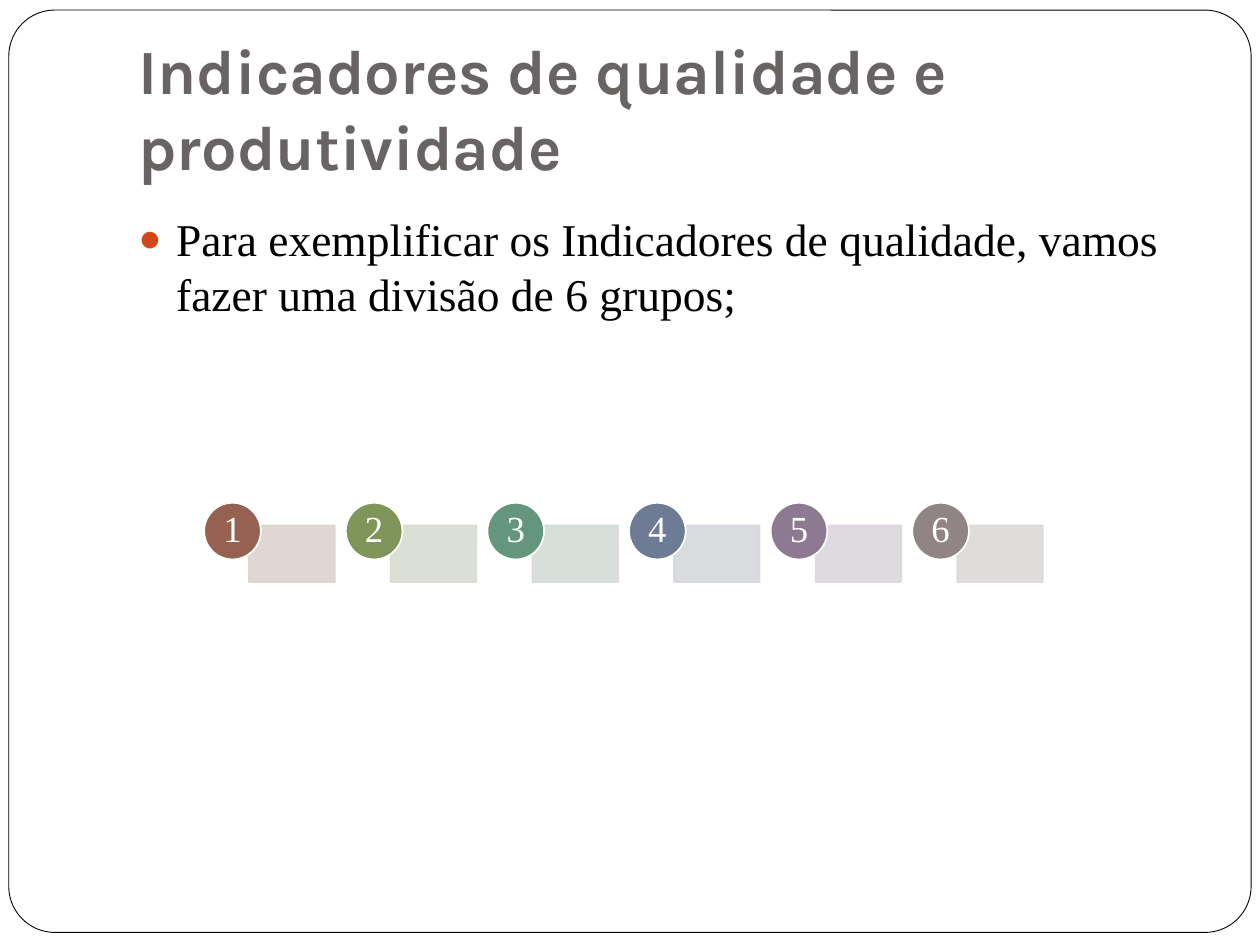
from lxml import etree
from pptx import Presentation
from pptx.dml.color import RGBColor
from pptx.enum import shapes, text
from pptx.oxml.ns import qn
from pptx.util import Pt

TITLE = "Indicadores de qualidade e produtividade"
BODY = ("Para exemplificar os Indicadores de qualidade, "
        "vamos fazer uma divisão de 6 grupos;")
# label, circle colour, panel colour
GROUPS = [
    ("1", "956251", "DDD3D0"),
    ("2", "7F955A", "D9DCD2"),
    ("3", "64957D", "D4DCD8"),
    ("4", "6E7B94", "D6D8DC"),
    ("5", "8D7992", "DBD7DC"),
    ("6", "918485", "DCD9D9"),
]
COLORS = {"white": "FFFFFF", "black": "000000", "title": "696464", "bullet": "D34817"}
SERIF = "Times New Roman"
GROUP_LEFT, GROUP_TOP, GROUP_STEP = 116.64, 287.28, 80.93
CIRCLE = 32.4
PANEL_DX, PANEL_DY, PANEL_W, PANEL_H = 25.7, 12.96, 48.96, 32.4


def rgb(value):
    return RGBColor.from_string(value)


def add_shape(kind, box, fill, line, width=1, opacity=None):
    sp = slide.shapes.add_shape(kind, *map(Pt, box))
    sp.shadow.inherit = False
    sp.fill.solid()
    sp.fill.fore_color.rgb = rgb(fill)
    sp.line.color.rgb = rgb(line)
    sp.line.width = Pt(width)
    if opacity is not None:
        for color in sp._element.spPr.iter(qn("a:srgbClr")):
            etree.SubElement(color, qn("a:alpha"), val=str(opacity * 1000))
    return sp


def write(sp, content, size, color, font=SERIF, bold=False, bullet=None,
          align=text.PP_ALIGN.LEFT, anchor=text.MSO_ANCHOR.TOP,
          insets=(7.2, 3.6, 7.2, 3.6), spacing=None):
    tf = sp.text_frame
    tf.word_wrap = True
    tf.vertical_anchor = anchor
    tf.margin_left, tf.margin_top, tf.margin_right, tf.margin_bottom = map(Pt, insets)
    p = tf.paragraphs[0]
    p.alignment = align
    p.line_spacing = spacing
    if bullet:
        add_bullet(p, bullet)
    r = p.add_run()
    r.text = content
    r.font.name = font
    r.font.size = Pt(size)
    r.font.bold = bold
    r.font.color.rgb = rgb(color)


def add_bullet(p, color, indent=21.6):
    pPr = p._p.get_or_add_pPr()
    pPr.set("marL", str(Pt(indent)))
    pPr.set("indent", str(-Pt(indent)))
    clr = etree.SubElement(pPr, qn("a:buClr"))
    etree.SubElement(clr, qn("a:srgbClr"), val=color)
    etree.SubElement(pPr, qn("a:buSzPct"), val="85000")
    etree.SubElement(pPr, qn("a:buFont"), typeface=SERIF)
    etree.SubElement(pPr, qn("a:buChar"), char="●")


prs = Presentation()
prs.slide_width, prs.slide_height = Pt(720), Pt(540)
slide = prs.slides.add_slide(prs.slide_layouts[6])

frame = add_shape(shapes.MSO_SHAPE.ROUNDED_RECTANGLE, (5.04, 5.76, 709.92, 527.04),
                  COLORS["white"], COLORS["black"], width=0.5)
frame.adjustments[0] = 0.05

title = slide.shapes.add_textbox(Pt(72), Pt(21.6), Pt(612), Pt(90))
write(title, TITLE, 36, COLORS["title"], font="Karla", bold=True,
      anchor=text.MSO_ANCHOR.BOTTOM, insets=(7.2, 3.6, 7.2, 7.2))

body = slide.shapes.add_textbox(Pt(72), Pt(113.76), Pt(612), Pt(87.84))
write(body, BODY, 26, COLORS["black"], bullet=COLORS["bullet"],
      insets=(7.2, 7, 7.2, 3.6))

for i, (label, circle_color, panel_color) in enumerate(GROUPS):
    left = GROUP_LEFT + i * GROUP_STEP
    add_shape(shapes.MSO_SHAPE.RECTANGLE,
              (left + PANEL_DX, GROUP_TOP + PANEL_DY, PANEL_W, PANEL_H),
              panel_color, panel_color, opacity=90)
    circle = add_shape(shapes.MSO_SHAPE.OVAL, (left, GROUP_TOP, CIRCLE, CIRCLE),
                       circle_color, COLORS["white"])
    write(circle, label, 21, COLORS["white"], align=text.PP_ALIGN.CENTER,
          anchor=text.MSO_ANCHOR.MIDDLE, insets=(0, 0, 0, 0), spacing=0.9)

prs.save("out.pptx")
